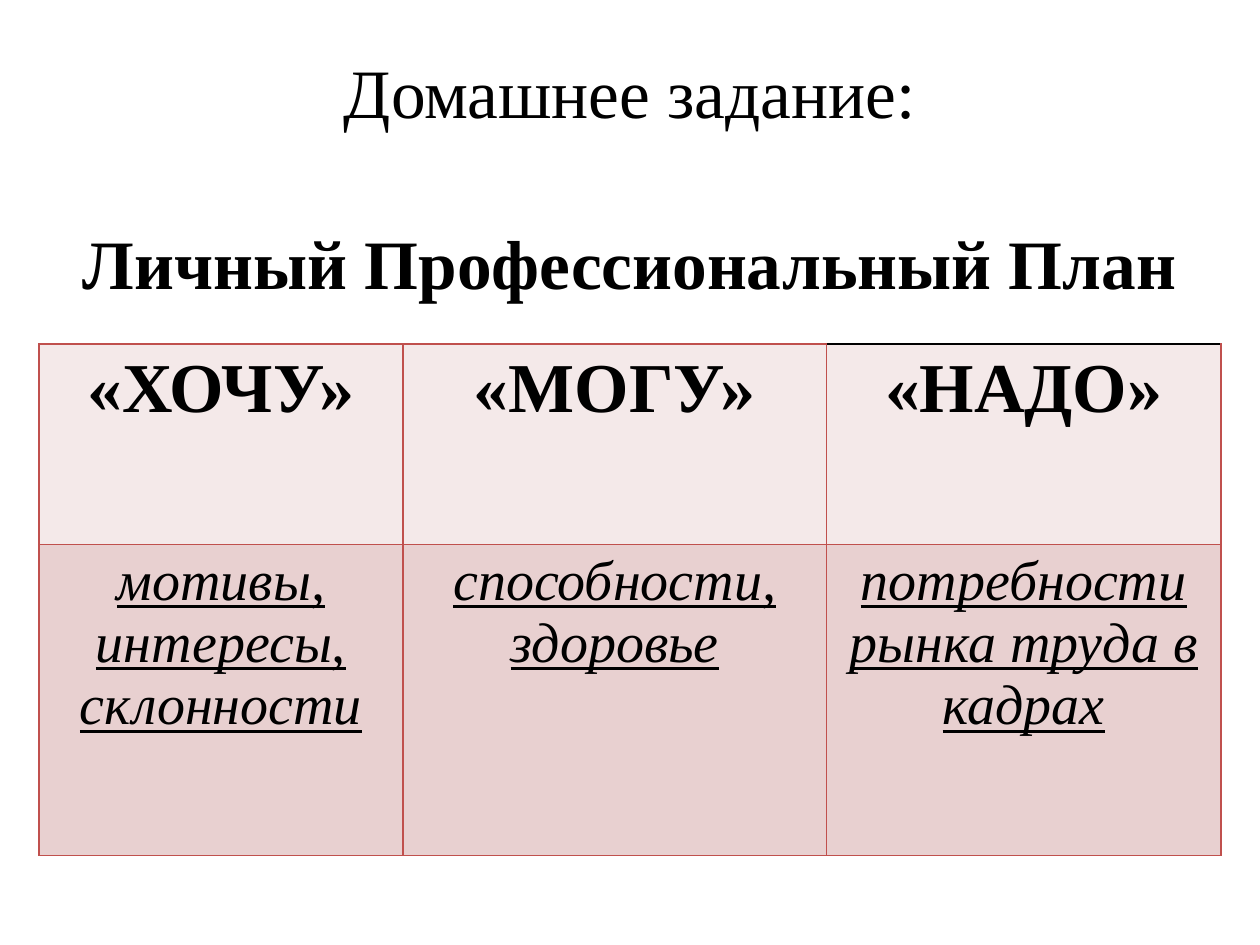
from dataclasses import dataclass

from lxml.etree import SubElement
from pptx import Presentation
from pptx.dml.color import RGBColor
from pptx.enum.text import MSO_ANCHOR, MSO_AUTO_SIZE, PP_ALIGN
from pptx.oxml.ns import qn
from pptx.util import Inches, Pt


@dataclass(frozen=True)
class Theme:
    font: str = "Times New Roman"
    ink: str = "000000"
    rule: str = "C0504D"
    row_fills: tuple = ("F4E9E9", "E8D0D0")
    title_size: float = 39.6
    heading_size: float = 40
    detail_size: float = 32
    title_gap: float = 50
    rule_width: float = 1


class HomeworkSlide:
    COLUMNS, ROWS = 100, 75

    def __init__(self, theme):
        self.theme = theme
        self.deck = Presentation()
        self.deck.slide_width, self.deck.slide_height = Inches(10), Inches(7.5)
        self.slide = self.deck.slides.add_slide(self.deck.slide_layouts[5])

    def across(self, columns):
        return round(self.deck.slide_width * columns / self.COLUMNS)

    def down(self, rows):
        return round(self.deck.slide_height * rows / self.ROWS)

    def add_run(self, paragraph, wording, size, bold=False, italic=False, underline=False):
        paragraph.alignment = PP_ALIGN.CENTER
        run = paragraph.add_run()
        run.text = wording
        font = run.font
        font.name, font.size = self.theme.font, Pt(size)
        font.bold, font.italic, font.underline = bold, italic, underline
        font.color.rgb = RGBColor.from_string(self.theme.ink)

    def add_title(self, task, subject, left, top, width, height):
        title = self.slide.shapes.title
        title.left, title.top = self.across(left), self.down(top)
        title.width, title.height = self.across(width), self.down(height)
        frame = title.text_frame
        frame.word_wrap, frame.auto_size = True, MSO_AUTO_SIZE.NONE
        frame.vertical_anchor = MSO_ANCHOR.MIDDLE
        self.add_run(frame.paragraphs[0], task, self.theme.title_size)
        plan = frame.add_paragraph()
        plan.space_before = Pt(self.theme.title_gap)
        self.add_run(plan, subject, self.theme.title_size, bold=True)

    def add_borders(self, cell, top_colour):
        properties = cell._tc.get_or_add_tcPr()
        for side in "LRTB":
            line = SubElement(properties, qn(f"a:ln{side}"), w=str(Pt(self.theme.rule_width)))
            fill = SubElement(line, qn("a:solidFill"))
            colour = top_colour if side == "T" else self.theme.rule
            SubElement(fill, qn("a:srgbClr"), val=colour)

    def add_plan(self, rows, styles, left, top, widths, heights):
        table = self.slide.shapes.add_table(
            len(rows), len(widths), self.across(left), self.down(top),
            self.across(sum(widths)), self.down(sum(heights))).table
        table.first_row = table.horz_banding = False
        for column, width in zip(table.columns, widths):
            column.width = self.across(width)
        for row, height in zip(table.rows, heights):
            row.height = self.down(height)
        for r, (wordings, style) in enumerate(zip(rows, styles)):
            for c, wording in enumerate(wordings):
                cell = table.cell(r, c)
                last_heading = r == 0 and c == len(widths) - 1
                self.add_borders(cell, self.theme.ink if last_heading else self.theme.rule)
                cell.fill.solid()
                cell.fill.fore_color.rgb = RGBColor.from_string(self.theme.row_fills[r])
                self.add_run(cell.text_frame.paragraphs[0], wording, **style)


def main():
    theme = Theme()
    homework = HomeworkSlide(theme)
    homework.add_title("Домашнее задание:", "Личный Профессиональный План",
                       left=5, top=3, width=90, height=22)
    homework.add_plan(
        rows=[("«ХОЧУ»", "«МОГУ»", "«НАДО»"),
              ("мотивы, интересы, склонности", "способности, здоровье",
               "потребности рынка труда в кадрах")],
        styles=[dict(size=theme.heading_size, bold=True),
                dict(size=theme.detail_size, italic=True, underline=True)],
        left=3.1, top=27.3, widths=(28.9, 33.6, 31.3), heights=(15.9, 24.7))
    homework.deck.save("out.pptx")


if __name__ == "__main__":
    main()
